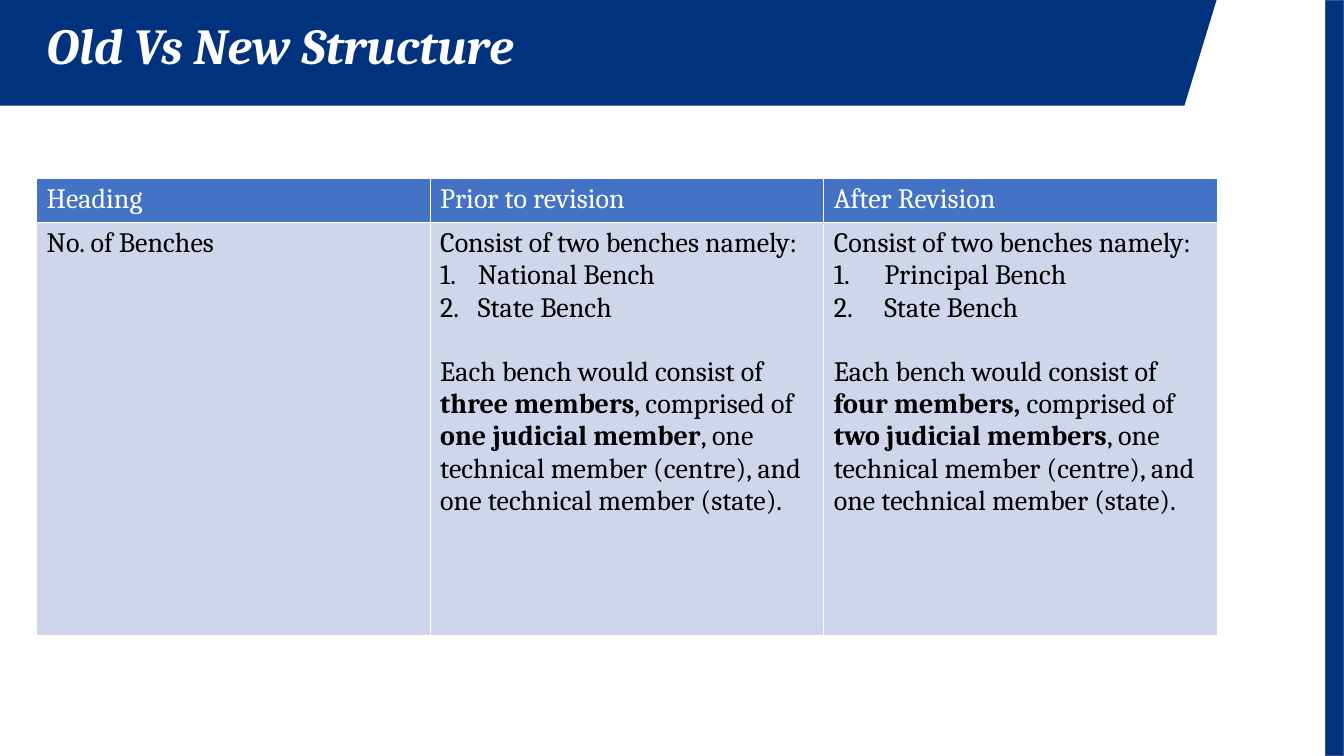
from pptx import Presentation, util as u
from pptx.dml.color import RGBColor
from pptx.enum import shapes, text
from pptx.oxml.ns import qn
from lxml import etree

NAVY = RGBColor(0x00, 0x32, 0x7D)
EDGE = RGBColor(0x32, 0x54, 0x91)
BLUE = RGBColor(0x44, 0x72, 0xC4)
PALE = RGBColor(0xCF, 0xD5, 0xEA)
WHITE = RGBColor(0xFF, 0xFF, 0xFF)
BLACK = RGBColor(0x00, 0x00, 0x00)


class Page:
    """Holds the style and the current slide."""

    font = "Cambria"
    body_size = u.Pt(20)

    def __init__(self, deck):
        self.slide = deck.slides.add_slide(deck.slide_layouts[5])
        self.shapes = self.slide.shapes

    def style(self, span, color, size=body_size, bold=False, italic=False):
        font = span.font
        font.name, font.size, font.bold, font.italic = self.font, size, bold, italic
        font.color.rgb = color

    def paint(self, shape, fill, line=None):
        shape.shadow.inherit = False
        shape.fill.solid()
        shape.fill.fore_color.rgb = fill
        if line is None:
            shape.line.fill.background()
        else:
            shape.line.color.rgb = line
            shape.line.width = u.Pt(1)

    def outline(self, points, fill):
        corners = [(u.Cm(x), u.Cm(y)) for x, y in points]
        builder = self.shapes.build_freeform(*corners[0])
        builder.add_line_segments(corners[1:], close=True)
        self.paint(builder.convert_to_shape(), fill)

    def bar(self, left, top, width, height, fill, line):
        box = self.shapes.add_shape(shapes.MSO_SHAPE.RECTANGLE, u.Cm(left), u.Cm(top),
                                    u.Cm(width), u.Cm(height))
        self.paint(box, fill, line)

    def title(self, wording, left, top, width, height):
        box = self.shapes.title
        box.left, box.top, box.width, box.height = map(u.Cm, (left, top, width, height))
        frame = box.text_frame
        frame.text = wording
        frame.auto_size = text.MSO_AUTO_SIZE.NONE
        frame.vertical_anchor = text.MSO_ANCHOR.MIDDLE
        para = frame.paragraphs[0]
        para.alignment = text.PP_ALIGN.LEFT
        para.line_spacing = 0.9
        self.style(para.runs[0], WHITE, u.Pt(36), bold=True, italic=True)
        # Bring the title in front of the banner
        self.shapes._spTree.append(box._element)

    def number(self, para, indent):
        props = para._p.get_or_add_pPr()
        props.set("marL", str(u.Cm(indent)))
        props.set("indent", str(-u.Cm(indent)))
        etree.SubElement(props, qn("a:buAutoNum"), type="arabicPeriod")

    def fill_cell(self, cell, paras, fill, color, indent):
        """Paragraphs: '#' numbers one, '^' sets a gap above, '*' toggles bold."""
        cell.fill.solid()
        cell.fill.fore_color.rgb = fill
        frame = cell.text_frame
        for i, wording in enumerate(paras):
            para = frame.add_paragraph() if i else frame.paragraphs[0]
            if wording.startswith("#"):
                self.number(para, indent)
            elif wording.startswith("^"):
                para.space_before = u.Pt(23)
            for j, part in enumerate(wording.lstrip("#^").split("*")):
                span = para.add_run()
                span.text = part
                self.style(span, color, bold=j % 2 == 1)

    def table(self, rows, left, top, col_width, heights, indents):
        count = len(rows[0])
        grid = self.shapes.add_table(len(rows), count, u.Cm(left), u.Cm(top),
                                     u.Cm(col_width * count), u.Cm(sum(heights))).table
        for col in grid.columns:
            col.width = u.Cm(col_width)
        for r, row in enumerate(rows):
            grid.rows[r].height = u.Cm(heights[r])
            fill, color = (PALE, BLACK) if r else (BLUE, WHITE)
            for c, paras in enumerate(row):
                self.fill_cell(grid.cell(r, c), paras, fill, color, indents[c])


def bench_text(first_bench, members, judicial):
    return ["Consist of two benches namely:", "#" + first_bench, "#State Bench",
            f"^Each bench would consist of {members} comprised of *{judicial}*, one "
            "technical member (centre), and one technical member (state)."]


def main():
    deck = Presentation()
    deck.slide_width, deck.slide_height = u.Cm(33.87), u.Cm(19.05)
    page = Page(deck)

    # Banner, side bar and title
    page.outline([(0, 0), (0, 2.66), (29.85, 2.66), (30.66, 0)], NAVY)
    page.bar(33.4, 0, 0.46, 19.05, NAVY, EDGE)
    page.title("Old Vs New Structure", 0.92, 0.41, 23.34, 1.63)

    # Comparison table
    rows = [
        [["Heading"], ["Prior to revision"], ["After Revision"]],
        [["No. of Benches"],
         bench_text("National Bench", "*three members*,", "one judicial member"),
         bench_text("Principal Bench", "*four members, *", "two judicial members")
         ],
    ]
    rows[1][2][3] = rows[1][2][3].replace("* comprised", "*comprised")
    page.table(rows, 0.92, 4.5, 9.92, (1.1, 10.41), (0, 0.95, 1.27))

    deck.save("out.pptx")


if __name__ == "__main__":
    main()
